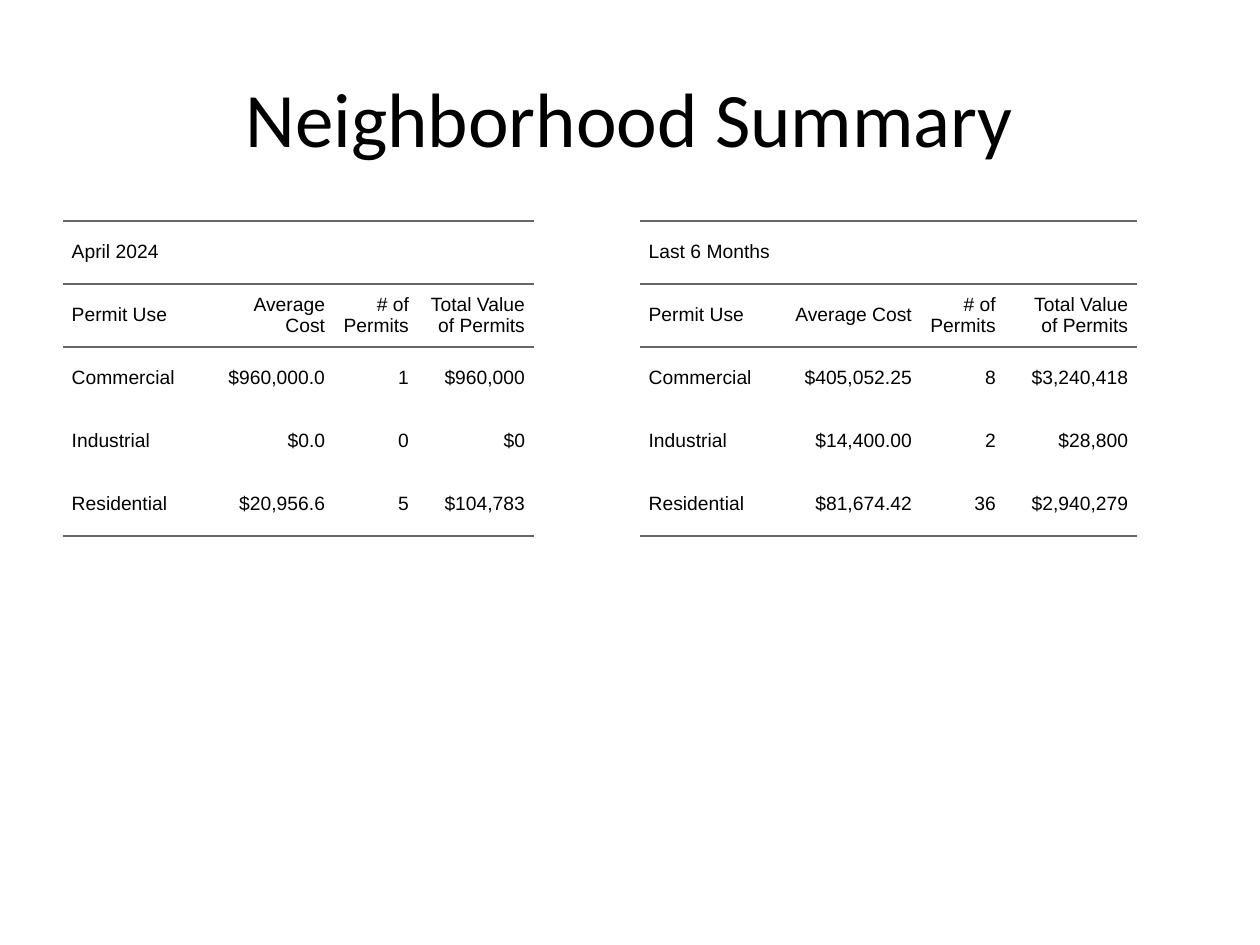
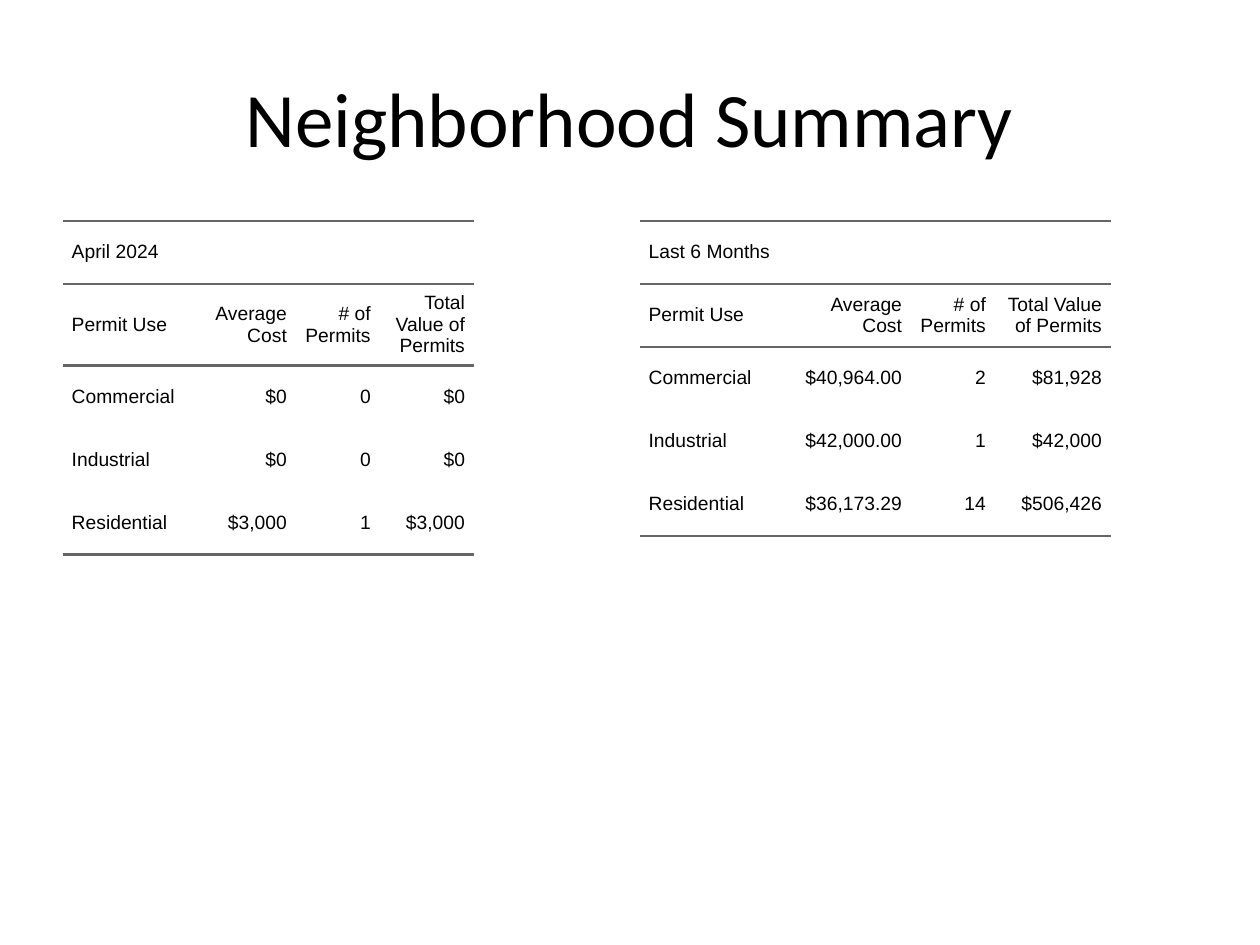
from lxml import etree
from pptx import Presentation
from pptx.dml.color import RGBColor
from pptx.enum.text import MSO_ANCHOR, PP_ALIGN
from pptx.oxml.ns import qn
from pptx.util import Cm, Pt

LEFT, CENTER, RIGHT = PP_ALIGN.LEFT, PP_ALIGN.CENTER, PP_ALIGN.RIGHT
MIDDLE = MSO_ANCHOR.MIDDLE

BLACK = RGBColor(0x00, 0x00, 0x00)
RULE_GRAY = RGBColor(0x66, 0x66, 0x66)
RULE_WIDTH = Pt(1.5)
CELL_PAD = Pt(5)
ROW_HEIGHT = Cm(1.27)
NO_STYLE_NO_GRID = "{2D5ABB26-0587-4C30-8999-92F81FD0307C}"

TITLE_ONLY = 5
TITLE = "Neighborhood Summary"
TITLE_BOX = (Cm(1.27), Cm(0.76), Cm(22.86), Cm(3.18))
TABLE_TOP = Cm(4.45)
TABLE_LEFTS = (Cm(1.27), Cm(12.9))

PERIODS = ("April 2024", "Last 6 Months")
HEADINGS = ("Permit Use", "Average Cost", "# of Permits", "Total Value of Permits")
USES = ("Commercial", "Industrial", "Residential")
USE_WIDTH, COUNT_WIDTH = 2.79, 1.69

# Per slide and period: widths (cm) of the cost and value columns, then one row per use.
NEIGHBORHOODS = (
    (
        (2.67, 2.34, (("$960,000.0", "1", "$960,000"),
                      ("$0.0", "0", "$0"),
                      ("$20,956.6", "5", "$104,783"))),
        (2.87, 2.67, (("$405,052.25", "8", "$3,240,418"),
                      ("$14,400.00", "2", "$28,800"),
                      ("$81,674.42", "36", "$2,940,279"))),
    ),
    (
        (1.9, 1.9, (("$0", "0", "$0"),
                    ("$0", "0", "$0"),
                    ("$3,000", "1", "$3,000"))),
        (2.67, 2.34, (("$40,964.00", "2", "$81,928"),
                      ("$42,000.00", "1", "$42,000"),
                      ("$36,173.29", "14", "$506,426"))),
    ),
)


def write_text(frame, text, *, font="Arial", size=11, color=BLACK, align=LEFT,
               spacing=0, margin=0):
    """Fill a text frame with one formatted paragraph, indented on both sides by margin."""
    paragraph = frame.paragraphs[0]
    paragraph.alignment = align
    paragraph.space_before = paragraph.space_after = Pt(spacing)
    properties = paragraph._p.get_or_add_pPr()
    for side in ("marL", "marR"):
        properties.set(side, str(int(margin)))
    properties.set("indent", "0")
    run = paragraph.add_run()
    run.text = text
    run.font.name = font
    run.font.size = Pt(size)
    run.font.color.rgb = color


def add_rules(cell, sides):
    """Draw horizontal rules on a cell; sides holds "T", "B" or both, in that order."""
    properties = cell._tc.get_or_add_tcPr()
    for position, side in enumerate(sides):
        line = etree.Element(qn(f"a:ln{side}"), w=str(int(RULE_WIDTH)))
        fill = etree.SubElement(line, qn("a:solidFill"))
        etree.SubElement(fill, qn("a:srgbClr"), val=str(RULE_GRAY))
        properties.insert(position, line)


def format_cell(cell, text, align, sides):
    cell.vertical_anchor = MIDDLE
    cell.margin_left = cell.margin_right = 0
    cell.margin_top = cell.margin_bottom = CELL_PAD
    cell.fill.background()
    add_rules(cell, sides)
    if text:
        write_text(cell.text_frame, text, align=align, spacing=5, margin=CELL_PAD)


def add_permit_table(slide, left, top, period, cost_width, value_width, figures):
    rows = [(period, "", "", ""), HEADINGS]
    rows += [(use, *values) for use, values in zip(USES, figures)]
    widths = [Cm(w) for w in (USE_WIDTH, cost_width, COUNT_WIDTH, value_width)]
    table = slide.shapes.add_table(len(rows), len(widths), left, top,
                                   sum(widths), ROW_HEIGHT * len(rows)).table
    table.first_row = table.horz_banding = False
    table._tbl.tblPr.find(qn("a:tableStyleId")).text = NO_STYLE_NO_GRID
    for column, width in zip(table.columns, widths):
        column.width = width
    for r, row in enumerate(rows):
        table.rows[r].height = ROW_HEIGHT
        sides = "TB" if r < 2 else "B" if r == len(rows) - 1 else ""
        for c, text in enumerate(row):
            format_cell(table.cell(r, c), text, RIGHT if c else LEFT, sides)
    table.cell(0, 0).merge(table.cell(0, len(widths) - 1))


def add_title(slide, box):
    title = slide.shapes.title
    title.left, title.top, title.width, title.height = box
    title.text_frame.vertical_anchor = MIDDLE
    write_text(title.text_frame, TITLE, font="Calibri", size=44, align=CENTER)


def add_summary_slide(deck, summaries):
    slide = deck.slides.add_slide(deck.slide_layouts[TITLE_ONLY])
    add_title(slide, TITLE_BOX)
    for left, period, summary in zip(TABLE_LEFTS, PERIODS, summaries):
        add_permit_table(slide, left, TABLE_TOP, period, *summary)


def main():
    deck = Presentation()
    deck.slide_width, deck.slide_height = Cm(25.4), Cm(19.05)
    for summaries in NEIGHBORHOODS:
        add_summary_slide(deck, summaries)
    deck.save("out.pptx")


if __name__ == "__main__":
    main()
